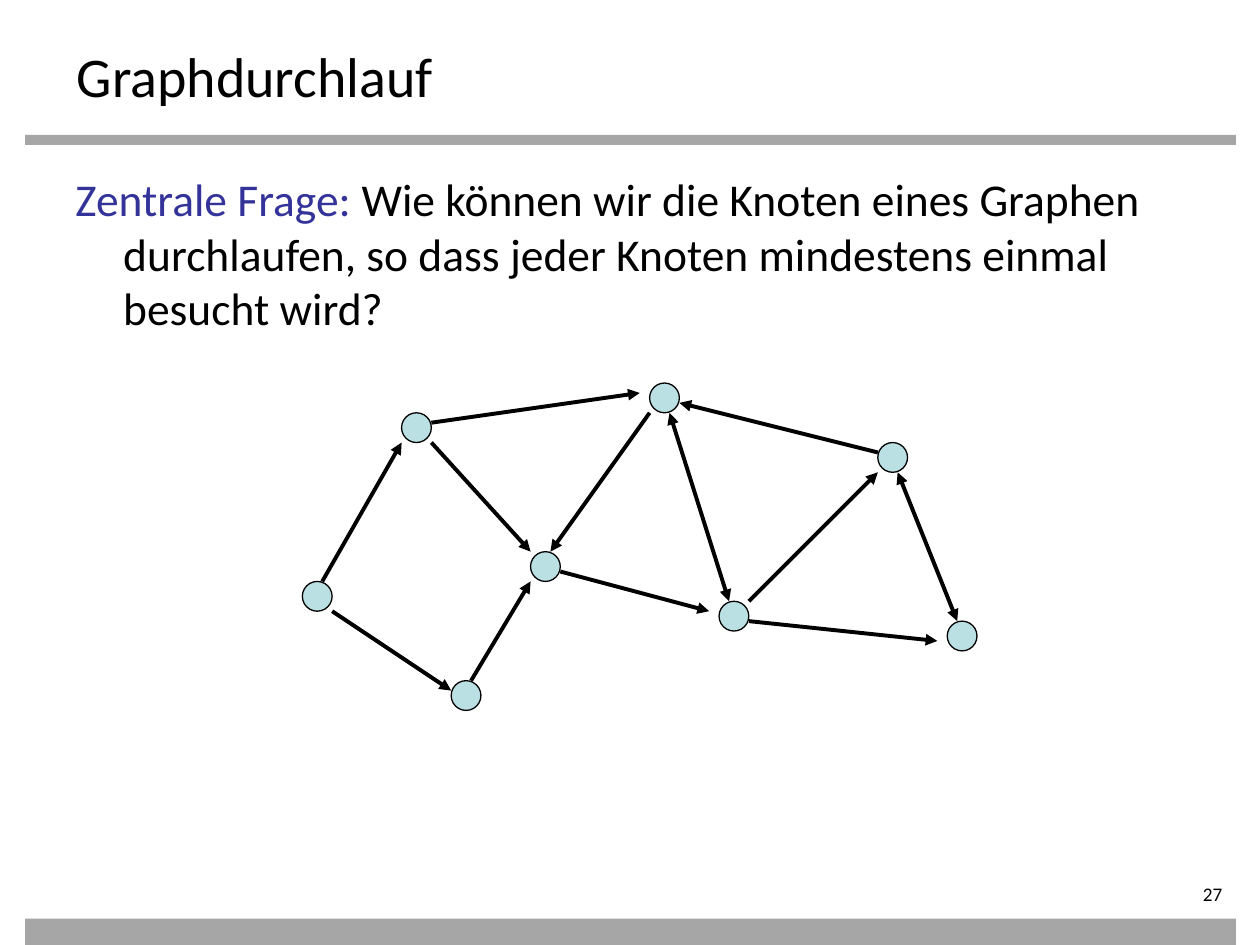
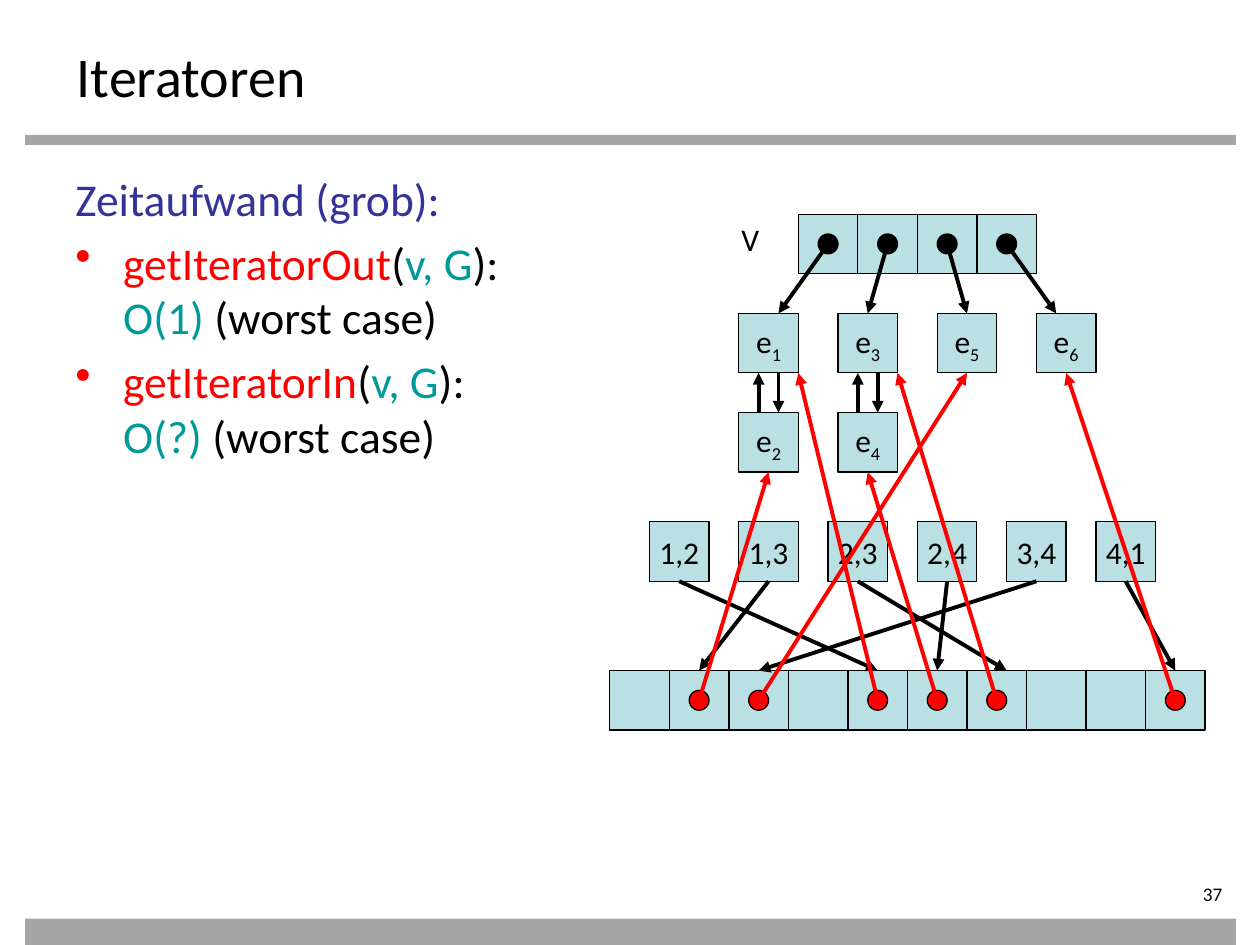
from pptx import Presentation
from pptx.dml.color import RGBColor
from pptx.enum.shapes import MSO_CONNECTOR, MSO_SHAPE
from pptx.enum.text import MSO_ANCHOR, MSO_AUTO_SIZE, PP_ALIGN
from pptx.oxml.ns import qn
from pptx.util import Inches, Pt
from lxml.etree import SubElement

BLACK = RGBColor(0x00, 0x00, 0x00)
GRAY = RGBColor(0xA6, 0xA6, 0xA6)
PALE_BLUE = RGBColor(0xBB, 0xE0, 0xE3)
INDIGO = RGBColor(0x33, 0x33, 0x99)
RED = RGBColor(0xFF, 0x00, 0x00)
TEAL = RGBColor(0x00, 0x99, 0x99)

FONT = "Calibri"
GRID = Inches(0.2 / 2.54)  # diagrams sit on a 2 mm grid
CELL = 6  # side of a square cell, in grid units
NODE = 3  # diameter of a graph node
DOT = 2  # diameter of a pointer dot

TITLE_FORMAT = {"name": FONT, "size": Pt(32)}
BODY_FORMAT = {"name": FONT, "size": Pt(26)}
LABEL_FORMAT = {"name": FONT, "size": Pt(18)}
NUMBER_FORMAT = {"name": FONT, "size": Pt(11)}


# Shared helpers
def apply_format(target, values):
    for name, value in values.items():
        setattr(target, name, value)


def add_span(para, text, font_format, color=BLACK):
    span = para.add_run()
    span.text = text
    apply_format(span.font, font_format)
    span.font.color.rgb = color
    return span


def add_solid(page, kind, left, top, width, height, fill, outlined=True):
    shape = page.shapes.add_shape(kind, left, top, width, height)
    shape.shadow.inherit = False
    shape.fill.solid()
    shape.fill.fore_color.rgb = fill
    if outlined:
        shape.line.color.rgb = BLACK
        shape.line.width = Pt(0.75)
    else:
        shape.line.fill.background()
    return shape


class Diagram:
    """Draws in grid units from the corner of a region."""

    def __init__(self, page, left, top):
        self.page, self.left, self.top = page, left, top

    def at(self, x, y):
        return self.left + round(x * GRID), self.top + round(y * GRID)

    def circle(self, x, y, size, fill):
        side = round(size * GRID)
        add_solid(self.page, MSO_SHAPE.OVAL, *self.at(x, y), side, side, fill)

    def cell(self, x, y, text="", subscript=""):
        side = round(CELL * GRID)
        box = add_solid(self.page, MSO_SHAPE.RECTANGLE, *self.at(x, y), side, side, PALE_BLUE)
        if not text:
            return
        apply_format(box.text_frame, {"word_wrap": False, "vertical_anchor": MSO_ANCHOR.MIDDLE})
        para = box.text_frame.paragraphs[0]
        para.alignment = PP_ALIGN.CENTER
        add_span(para, text, LABEL_FORMAT)
        if subscript:
            span = add_span(para, subscript, LABEL_FORMAT)
            span._r.get_or_add_rPr().set("baseline", "-25000")

    def arrow(self, start, end, color=BLACK, both_ends=False):
        line = self.page.shapes.add_connector(
            MSO_CONNECTOR.STRAIGHT, *self.at(*start), *self.at(*end))
        line.line.color.rgb = color
        line.line.width = Pt(2.25)
        properties = line._element.spPr
        outline = properties.find(qn("a:ln"))
        for tag in ("a:headEnd", "a:tailEnd") if both_ends else ("a:tailEnd",):
            SubElement(outline, qn(tag), type="triangle")
        SubElement(properties, qn("a:effectLst"))


# Frame: title, bands and page number
def add_page(deck, title, number):
    page = deck.slides.add_slide(deck.slide_layouts[5])
    for top, height in ((1.07, 0.08), (7.29, 0.21)):
        add_solid(page, MSO_SHAPE.RECTANGLE, Inches(0.2), Inches(top),
                  Inches(9.61), Inches(height), GRAY, outlined=False)

    number_box = page.shapes.add_textbox(Inches(8.7), Inches(7), Inches(1.1), Inches(0.22))
    apply_format(number_box.text_frame, {
        "word_wrap": True, "margin_left": 0, "margin_top": 0,
        "margin_right": Inches(0.1), "margin_bottom": 0})
    para = number_box.text_frame.paragraphs[0]
    para.alignment = PP_ALIGN.RIGHT
    add_span(para, number, NUMBER_FORMAT)

    heading = page.shapes.title
    apply_format(heading, {"left": Inches(0.51), "top": Inches(0.28),
                           "width": Inches(9), "height": Inches(0.55)})
    apply_format(heading.text_frame, {
        "vertical_anchor": MSO_ANCHOR.TOP, "auto_size": MSO_AUTO_SIZE.NONE, "word_wrap": True})
    para = heading.text_frame.paragraphs[0]
    para.alignment = PP_ALIGN.LEFT
    add_span(para, title, TITLE_FORMAT)
    return page


# Body text: each paragraph is (bulleted, lines), each line a list of (text, colour)
def add_body(page, paragraphs):
    box = page.shapes.add_textbox(Inches(0.5), Inches(1.31), Inches(9), Inches(5.43))
    frame = box.text_frame
    frame.word_wrap = True
    for index, (bulleted, lines) in enumerate(paragraphs):
        para = frame.add_paragraph() if index else frame.paragraphs[0]
        properties = para._p.get_or_add_pPr()
        properties.set("marL", str(Inches(0.38)))
        properties.set("indent", str(-Inches(0.38)))
        if bulleted:
            SubElement(properties, qn("a:buChar"), char="•")
        if index:
            para.space_before = Pt(5.2)
        for line_index, line in enumerate(lines):
            if line_index:
                para.add_line_break()
            for text, color in line:
                add_span(para, text, BODY_FORMAT, color)


# Directed graph
def add_graph(page, left, top):
    graph = Diagram(page, left, top)
    nodes = [(10, 3), (35, 0), (23, 17), (42, 22), (58, 6), (0, 20), (15, 30), (65, 24)]
    one_way = [
        ((3, 23), (15, 31)), ((17, 30), (23, 20)), ((2, 20), (10, 6)),
        ((13, 6), (23, 17)), ((13, 4), (34, 1)), ((26, 19), (41, 23)),
        ((58, 7), (38, 2)), ((45, 24), (64, 26)), ((35, 3), (25, 17)),
        ((45, 22), (58, 9)),
    ]
    two_way = [((37, 3), (43, 22)), ((60, 9), (66, 24))]
    for x, y in nodes:
        graph.circle(x, y, NODE, PALE_BLUE)
    for start, end in one_way:
        graph.arrow(start, end)
    for start, end in two_way:
        graph.arrow(start, end, both_ends=True)


# Adjacency lists with a hash table
def add_hash_diagram(page, left, top):
    diagram = Diagram(page, left, top)
    half = CELL // 2
    inset = (CELL - DOT) // 2
    list_row, second_row, key_row, table_row = 10, 20, 31, 46

    # Vertex array V and its pointers
    label = page.shapes.add_textbox(*diagram.at(12, 0), Inches(0.37), Inches(0.4))
    label.text_frame.word_wrap = False
    add_span(label.text_frame.paragraphs[0], "V", LABEL_FORMAT)
    for index, target in enumerate((17, 26, 36, 45)):
        x = 19 + CELL * index
        diagram.cell(x, 0)
        diagram.circle(x + inset, inset, DOT, BLACK)
        diagram.arrow((x + half, half), (target, list_row))

    # Edge lists
    for index, edges in enumerate(("12", "34", "5", "6")):
        x = 13 + 10 * index
        for y, edge in zip((list_row, second_row), edges):
            diagram.cell(x, y, "e", edge)
        if len(edges) == 2:
            diagram.arrow((x + 4, list_row + CELL), (x + 4, second_row))
            diagram.arrow((x + 2, second_row), (x + 2, list_row + CELL))

    # Keys, then the table with its filled slots
    keys = {"1,2": 27, "1,3": 9, "2,3": 40, "2,4": 33, "3,4": 15, "4,1": 57}
    slots = {1: (16, 26), 2: (36, 16), 4: (19, 16), 5: (26, 26), 6: (29, 16), 9: (46, 16)}
    for index, key in enumerate(keys):
        diagram.cell(4 + 9 * index, key_row, key)
    for slot in range(10):
        diagram.cell(CELL * slot, table_row)
        if slot in slots:
            diagram.circle(CELL * slot + inset, table_row + inset, DOT, RED)

    # Hashing arrows and pointers back to the edges
    for index, target in enumerate(keys.values()):
        diagram.arrow((4 + 9 * index + half, key_row + CELL), (target, table_row))
    for slot, target in slots.items():
        diagram.arrow((CELL * slot + half, table_row + half), target, RED)


def add_traversal_page(deck):
    page = add_page(deck, "Graphdurchlauf", "27")
    question = (" Wie können wir die Knoten eines Graphen durchlaufen, "
                "so dass jeder Knoten mindestens einmal besucht wird?")
    add_body(page, [(False, [[("Zentrale Frage:", INDIGO), (question, BLACK)]])])
    add_graph(page, Inches(2.4), Inches(3.04))


def add_iterator_page(deck):
    page = add_page(deck, "Iteratoren", "37")
    paragraphs = [(False, [[("Zeitaufwand (grob):", INDIGO)]])]
    for function, cost in (("getIteratorOut", "O(1) "), ("getIteratorIn", "O(?) ")):
        call = [(function, RED), ("(", BLACK), ("v, G", TEAL), ("): ", BLACK)]
        paragraphs.append((True, [call, [(cost, TEAL), ("(worst case)", BLACK)]]))
    add_body(page, paragraphs)
    add_hash_diagram(page, Inches(4.84), Inches(1.7))


def main():
    deck = Presentation()
    deck.slide_width, deck.slide_height = Inches(10), Inches(7.5)
    add_traversal_page(deck)
    add_iterator_page(deck)
    deck.save("out.pptx")


if __name__ == "__main__":
    main()
